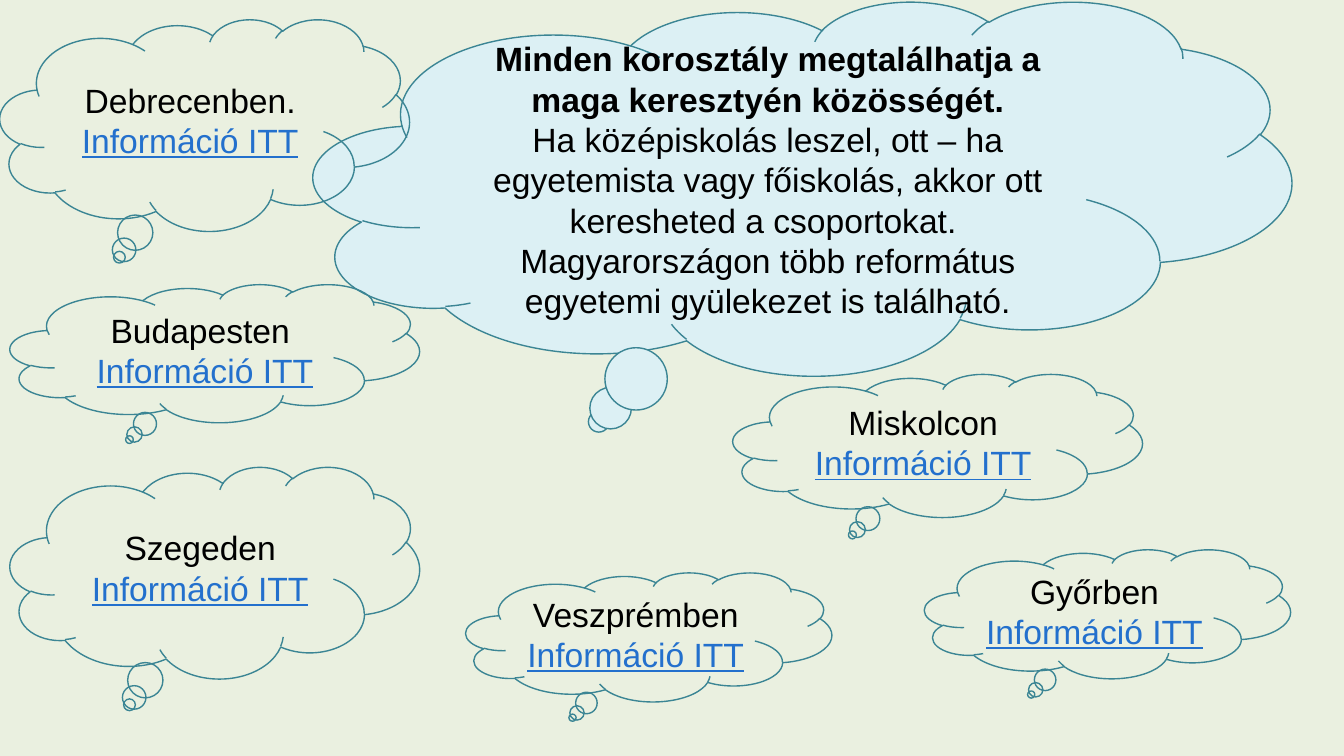
"""Build a slide of thought clouds listing Christian student communities by city."""
from pptx import Presentation
from pptx.dml.color import RGBColor
from pptx.enum.shapes import MSO_SHAPE
from pptx.enum.text import MSO_ANCHOR, PP_ALIGN
from pptx.util import Inches, Pt

CLOUD = MSO_SHAPE.CLOUD_CALLOUT
MIDDLE = MSO_ANCHOR.MIDDLE
CENTER = PP_ALIGN.CENTER

THEME = {
    "background": RGBColor.from_string("EAF0E0"),
    "highlight": RGBColor.from_string("DCF0F4"),
    "outline": RGBColor.from_string("3B8594"),
    "text": RGBColor.from_string("000000"),
    "link": RGBColor.from_string("2370CD"),
    "font": "Arial",
    "size": Pt(24),
    "outline_width": Pt(1),
}

deck = Presentation()
deck.slide_width = Inches(13.33)
deck.slide_height = Inches(7.5)
percent_x = deck.slide_width / 100
percent_y = deck.slide_height / 100
slide = deck.slides.add_slide(deck.slide_layouts[6])
slide.background.fill.solid()
slide.background.fill.fore_color.rgb = THEME["background"]


def add_cloud(left, top, width, height):
    """Add an outlined cloud placed in percent of the slide; return it."""
    cloud = slide.shapes.add_shape(
        CLOUD, round(left * percent_x), round(top * percent_y),
        round(width * percent_x), round(height * percent_y))
    cloud.shadow.inherit = False
    cloud.fill.background()
    cloud.line.color.rgb = THEME["outline"]
    cloud.line.width = THEME["outline_width"]
    cloud.text_frame.word_wrap = True
    cloud.text_frame.vertical_anchor = MIDDLE
    return cloud


def style_text(cloud):
    """Centre every paragraph and apply the base font."""
    for paragraph in cloud.text_frame.paragraphs:
        paragraph.alignment = CENTER
        for run in paragraph.runs:
            run.font.name = THEME["font"]
            run.font.size = THEME["size"]
            run.font.color.rgb = THEME["text"]


message = add_cloud(23.33, 0.13, 72.77, 49.47)
message.fill.solid()
message.fill.fore_color.rgb = THEME["highlight"]
message.text_frame.text = "\n".join([
    "Minden korosztály megtalálhatja a maga keresztyén közösségét.",
    "Ha középiskolás leszel, ott – ha egyetemista vagy főiskolás, "
    "akkor ott keresheted a csoportokat. ",
    "Magyarországon több református egyetemi gyülekezet is található.",
])
style_text(message)
message.text_frame.paragraphs[0].runs[0].font.bold = True

LARGE_WIDTH, SMALL_WIDTH = 30.46, 27.23
city_clouds = [
    ("Debrecenben. ", 0, 2.53, LARGE_WIDTH, 28),
    ("Budapesten\n ", 0.75, 37.6, LARGE_WIDTH, 18.27),
    ("Szegeden\n", 0.75, 61.73, LARGE_WIDTH, 28),
    ("Miskolcon\n", 54.54, 49.47, LARGE_WIDTH, 18.93),
    ("Veszprémben\n", 34.66, 75.73, SMALL_WIDTH, 17.07),
    ("Győrben\n", 68.79, 72.67, SMALL_WIDTH, 17.07),
]
for city, *place in city_clouds:
    city_cloud = add_cloud(*place)
    city_cloud.text_frame.text = city
    link = city_cloud.text_frame.paragraphs[-1].add_run()
    link.text = "Információ ITT"
    style_text(city_cloud)
    link.font.color.rgb = THEME["link"]
    link.font.underline = True

deck.save("out.pptx")
